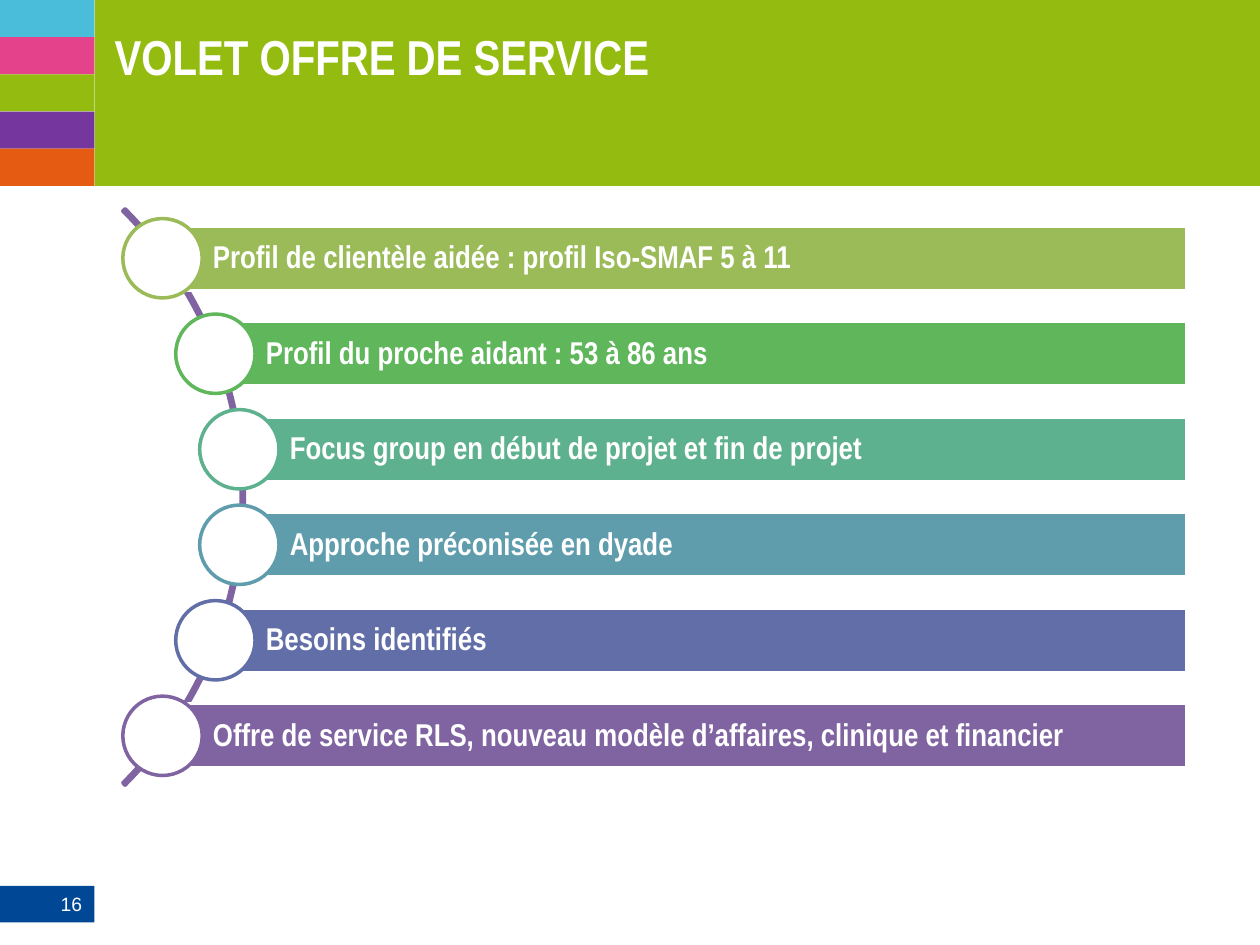
from pptx import Presentation
from pptx.dml.color import RGBColor
from pptx.enum.shapes import MSO_SHAPE
from pptx.enum.text import MSO_ANCHOR, PP_ALIGN
from pptx.util import Inches, Pt

RECT, OVAL, ARC = MSO_SHAPE.RECTANGLE, MSO_SHAPE.OVAL, MSO_SHAPE.BLOCK_ARC
TOP, MIDDLE = MSO_ANCHOR.TOP, MSO_ANCHOR.MIDDLE
LEFT, RIGHT = PP_ALIGN.LEFT, PP_ALIGN.RIGHT

WHITE, GREEN, BLUE, PURPLE = "FFFFFF", "94BC10", "004796", "8064A2"
STRIPES = ["4ABDDB", "E5428C", GREEN, "75369E", "E55B12"]
TOPICS = [
    ("Profil de clientèle aidée : profil Iso-SMAF 5 à 11", "9BBB59", 12.9),
    ("Profil du proche aidant : 53 à 86 ans", "5FB65B", 17.1),
    ("Focus group en début de projet et fin de projet", "5DB18E", 19),
    ("Approche préconisée en dyade", "5F9DAC", 19),
    ("Besoins identifiés", "626EA7", 17.1),
    ("Offre de service RLS, nouveau modèle d’affaires, clinique et financier", PURPLE, 12.9),
]
NARROW = {"name": "Arial Narrow", "bold": True}
TITLE = {**NARROW, "size": Pt(28)}
TOPIC = {**NARROW, "size": Pt(18)}
NUMBER = {"name": "Arial", "size": Pt(11)}


def rgb(value):
    """Return the colour of a hex string."""
    return RGBColor.from_string(value)


class Deck:
    """Draw on a grid of 100 columns by 75 rows."""

    def __init__(self):
        """Open a presentation with one blank slide."""
        self.prs = Presentation()
        self.prs.slide_width, self.prs.slide_height = Inches(10), Inches(7.5)
        self.cell = self.prs.slide_width / 100
        self.s = self.prs.slides.add_slide(self.prs.slide_layouts[6])

    def grid(self, *cells):
        """Turn grid units into lengths."""
        return [round(c * self.cell) for c in cells]

    def shape(self, kind, box, fill=None, line=None):
        """Add a preset shape."""
        sp = self.s.shapes.add_shape(kind, *self.grid(*box))
        sp.shadow.inherit = False
        if fill:
            sp.fill.solid()
            sp.fill.fore_color.rgb = rgb(fill)
        else:
            sp.fill.background()
        if line:
            sp.line.color.rgb = rgb(line)
            sp.line.width = Pt(2)
        else:
            sp.line.fill.background()
        return sp

    def arc(self, box, line, adjustments):
        """Add a thin block arc."""
        sp = self.shape(ARC, box, line=line)
        for i, value in enumerate(adjustments):
            sp.adjustments[i] = value

    def label(self, sp, text, font, margins, anchor=TOP, align=LEFT, **spacing):
        """Put one white paragraph in a shape."""
        tf = sp.text_frame
        tf.word_wrap = True
        tf.vertical_anchor = anchor
        sides = ("left", "top", "right", "bottom")
        for side, margin in zip(sides, self.grid(*margins)):
            setattr(tf, f"margin_{side}", margin)
        p = tf.paragraphs[0]
        for name, value in {"alignment": align, **spacing}.items():
            setattr(p, name, value)
        r = p.add_run()
        r.text = text
        for name, value in font.items():
            setattr(r.font, name, value)
        r.font.color.rgb = rgb(WHITE)

    def title(self, text, box):
        """Add the slide title."""
        sp = self.s.shapes.add_textbox(*self.grid(*box))
        self.label(sp, text, TITLE, (0, 0, 0, 0))

    def topic(self, text, colour, left, middle):
        """Add a bar with a ring centred on its left end."""
        height, ring, right = 5.1, 6.3, 94.2
        bar = (left, middle - height / 2, right - left, height)
        sp = self.shape(RECT, bar, colour, WHITE)
        self.label(sp, text, TOPIC, (4, 0.5, 0.5, 0.5), MIDDLE,
                   line_spacing=0.9, space_after=Pt(6.3))
        circle = (left - ring / 2, middle - ring / 2, ring, ring)
        self.shape(OVAL, circle, WHITE, colour)


def main():
    """Build the slide."""
    deck = Deck()
    side, stripe = 7.5, 2.95
    deck.shape(RECT, (side, 0, 100 - side, stripe * len(STRIPES)), GREEN)
    sp = deck.shape(RECT, (0, 70.3, side, 2.9), BLUE)
    deck.label(sp, "16", NUMBER, (1, 0.5, 1, 0.5), MIDDLE, RIGHT)
    for i, colour in enumerate(STRIPES):
        deck.shape(RECT, (0, i * stripe, side, stripe), colour)
    deck.title("VOLET OFFRE DE SERVICE", (9.1, 2.1, 58.3, 8.5))
    deck.arc((-45.3, 7.1, 64.7, 64.7), PURPLE, (189, 27, 0.004))
    for i, (text, colour, left) in enumerate(TOPICS):
        deck.topic(text, colour, left, 20.5 + 7.58 * i)
    deck.prs.save("out.pptx")


if __name__ == "__main__":
    main()
